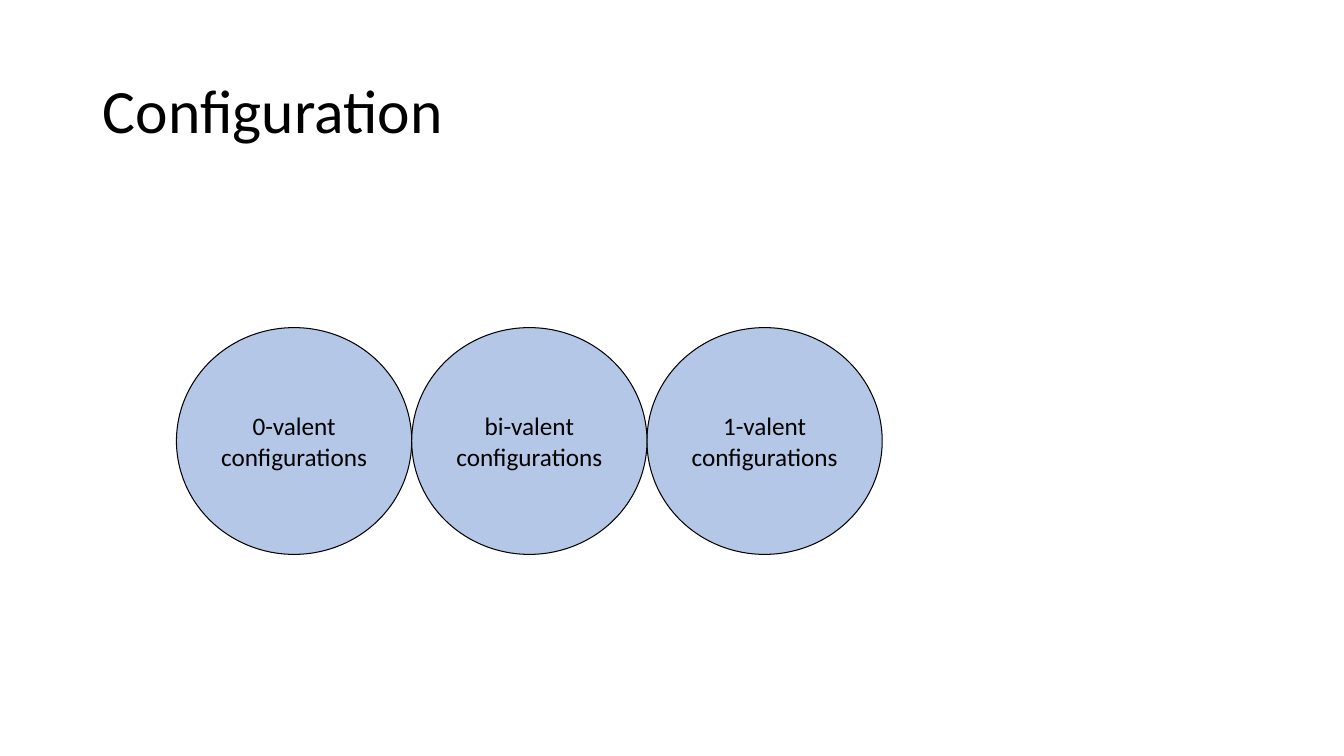
from pptx import Presentation
from pptx.dml.color import RGBColor
from pptx.enum.shapes import MSO_SHAPE as Shape
from pptx.enum.text import MSO_ANCHOR as Anchor, PP_ALIGN as Align
from pptx.util import Inches, Pt

COLOURS = {"text": "000000", "outline": "000000", "circle": "B4C7E7"}
FONT = "Calibri"
VALENCIES = [(0, "0-valent"), (2, "1-valent"), (1, "bi-valent")]


def colour(name):
    """Return the named colour."""
    return RGBColor.from_string(COLOURS[name])


def add_run(para, text, size):
    """Append a formatted run to a paragraph."""
    run = para.add_run()
    run.text = text
    run.font.name = FONT
    run.font.size = Pt(size)
    run.font.color.rgb = colour("text")


def place_title(slide, text, box):
    """Move the title placeholder into the box and fill it."""
    title = slide.shapes.title
    title.left, title.top, title.width, title.height = map(Inches, box)
    frame = title.text_frame
    frame.word_wrap = True
    frame.vertical_anchor = Anchor.MIDDLE
    para = frame.paragraphs[0]
    para.alignment = Align.LEFT
    para.line_spacing = 0.9
    add_run(para, text, 44)


def draw_valencies(slide, box):
    """Draw touching circles in equal columns of the box."""
    left, top, width, height = box
    column = width / len(VALENCIES)
    for index, valency in VALENCIES:
        circle = slide.shapes.add_shape(
            Shape.OVAL, Inches(left + index * column), Inches(top),
            Inches(column), Inches(height))
        circle.shadow.inherit = False
        circle.fill.solid()
        circle.fill.fore_color.rgb = colour("circle")
        circle.line.color.rgb = colour("outline")
        circle.line.width = Pt(0.75)
        frame = circle.text_frame
        frame.word_wrap = False
        frame.vertical_anchor = Anchor.MIDDLE
        para = frame.paragraphs[0]
        para.alignment = Align.CENTER
        add_run(para, valency, 18)
        para.add_line_break()
        add_run(para, "configurations", 18)


def main():
    """Build and save the deck."""
    deck = Presentation()
    deck.slide_width, deck.slide_height = Inches(13.33), Inches(7.5)
    slide = deck.slides.add_slide(deck.slide_layouts[5])
    place_title(slide, "Configuration", (0.92, 0.4, 11.5, 1.45))
    draw_valencies(slide, (1.75, 3.25, 7, 2.25))
    deck.save("out.pptx")


if __name__ == "__main__":
    main()
